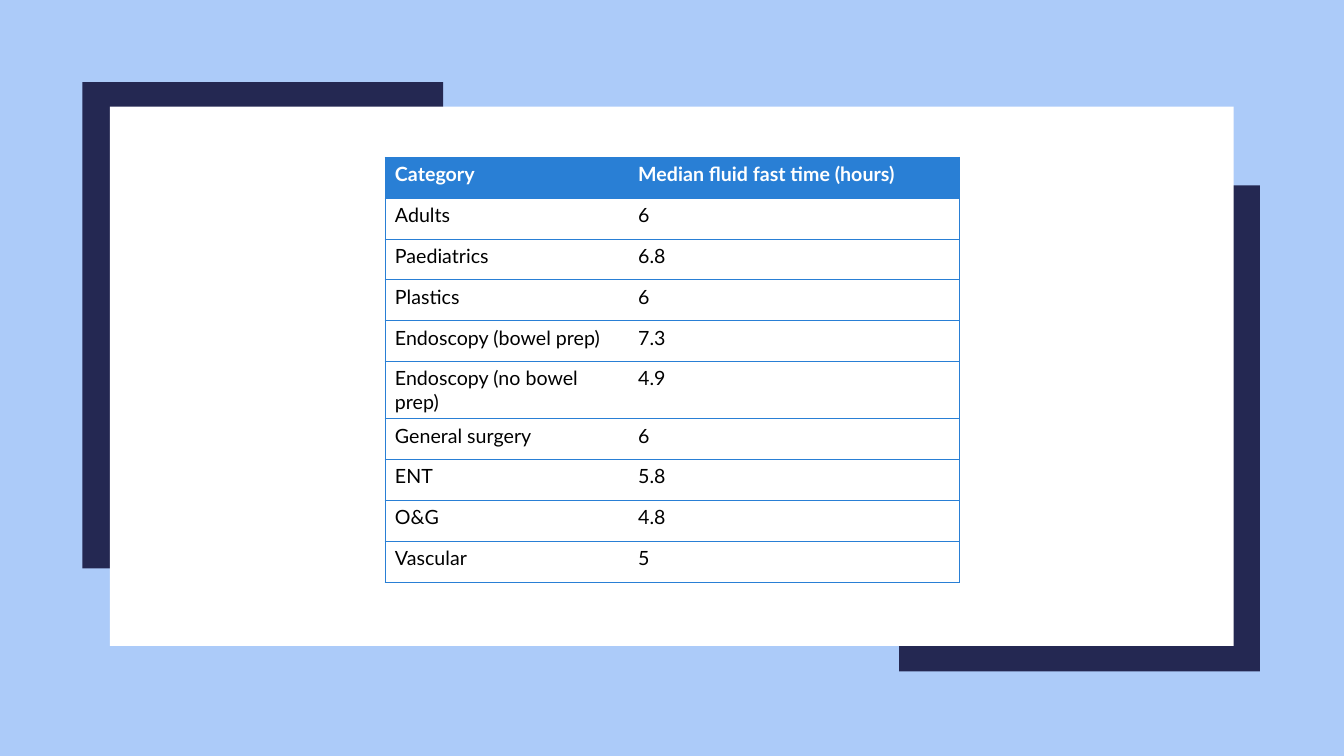
"""Build a slide with a framed table of median fluid fasting times."""
from lxml import etree
from pptx import Presentation
from pptx import util as u
from pptx.dml.color import RGBColor
from pptx.enum import shapes
from pptx.oxml.ns import qn

SKY = RGBColor(0xAC, 0xCB, 0xF9)
NAVY = RGBColor(0x24, 0x28, 0x52)
BLUE = RGBColor(0x29, 0x7F, 0xD5)
WHITE = RGBColor(0xFF, 0xFF, 0xFF)
BLACK = RGBColor(0, 0, 0)

BRACKET = [(30.61, 4.67), (31.75, 4.67), (31.75, 16.92),
           (22.66, 16.92), (22.66, 15.85), (30.61, 15.85)]
BRACKET_TURNED = [(33.83 - x, 18.99 - y) for x, y in BRACKET]
FAST_TIMES = [
    ("Category", "Median fluid fast time (hours)"),
    ("Adults", "6"),
    ("Paediatrics", "6.8"),
    ("Plastics", "6"),
    ("Endoscopy (bowel prep)", "7.3"),
    ("Endoscopy (no bowel prep)", "4.9"),
    ("General surgery", "6"),
    ("ENT", "5.8"),
    ("O&G", "4.8"),
    ("Vascular", "5"),
]
COLUMN_WIDTHS = (6.13, 8.35)
ROW_HEIGHT = 1.03
HEADER_FORMAT = {"name": "Lato", "size": u.Pt(14), "bold": True}
BODY_FORMAT = {**HEADER_FORMAT, "bold": False}


def paint(shape, color):
    shape.shadow.inherit = False
    shape.fill.solid()
    shape.fill.fore_color.rgb = color
    shape.line.fill.background()


def add_bracket(page, corners):
    points = [(u.Cm(x), u.Cm(y)) for x, y in corners]
    builder = page.shapes.build_freeform(*points[0], scale=1.0)
    builder.add_line_segments(points[1:], close=True)
    paint(builder.convert_to_shape(), NAVY)


def add_panel(page, left, top, width, height):
    panel = page.shapes.add_shape(
        shapes.MSO_SHAPE.RECTANGLE, u.Cm(left), u.Cm(top), u.Cm(width), u.Cm(height))
    paint(panel, WHITE)


def set_borders(cell, visible_sides):
    properties = cell._tc.get_or_add_tcPr()
    for position, side in enumerate("LRTB"):
        line = etree.Element(qn(f"a:ln{side}"), w=str(u.Pt(0.5)))
        if side in visible_sides:
            fill = etree.SubElement(line, qn("a:solidFill"))
            etree.SubElement(fill, qn("a:srgbClr"), val=str(BLUE))
        else:
            etree.SubElement(line, qn("a:noFill"))
        properties.insert(position, line)


def fill_cell(cell, wording, fill_color, font_color, font_format):
    cell.fill.solid()
    cell.fill.fore_color.rgb = fill_color
    span = cell.text_frame.paragraphs[0].add_run()
    span.text = wording
    span.font.color.rgb = font_color
    for name, value in font_format.items():
        setattr(span.font, name, value)


def add_fast_table(page, left, top):
    frame = page.shapes.add_table(
        len(FAST_TIMES), len(COLUMN_WIDTHS), u.Cm(left), u.Cm(top),
        u.Cm(sum(COLUMN_WIDTHS)), u.Cm(ROW_HEIGHT * len(FAST_TIMES)))
    table = frame.table
    table.horz_banding = False
    for column, width in zip(table.columns, COLUMN_WIDTHS):
        column.width = u.Cm(width)
    for row_number, (row, wordings) in enumerate(zip(table.rows, FAST_TIMES)):
        row.height = u.Cm(ROW_HEIGHT)
        style = (WHITE, BLACK, BODY_FORMAT) if row_number else (BLUE, WHITE, HEADER_FORMAT)
        for cell, wording, outer_side in zip(row.cells, wordings, "LR"):
            fill_cell(cell, wording, *style)
            set_borders(cell, "TB" + outer_side)


def main():
    deck = Presentation()
    deck.slide_width, deck.slide_height = u.Cm(33.87), u.Cm(19.05)
    page = deck.slides.add_slide(deck.slide_layouts[6])
    page.background.fill.solid()
    page.background.fill.fore_color.rgb = SKY
    for corners in (BRACKET, BRACKET_TURNED):
        add_bracket(page, corners)
    add_panel(page, 2.77, 2.69, 28.32, 13.59)
    add_fast_table(page, 9.7, 3.96)
    deck.save("out.pptx")


if __name__ == "__main__":
    main()
